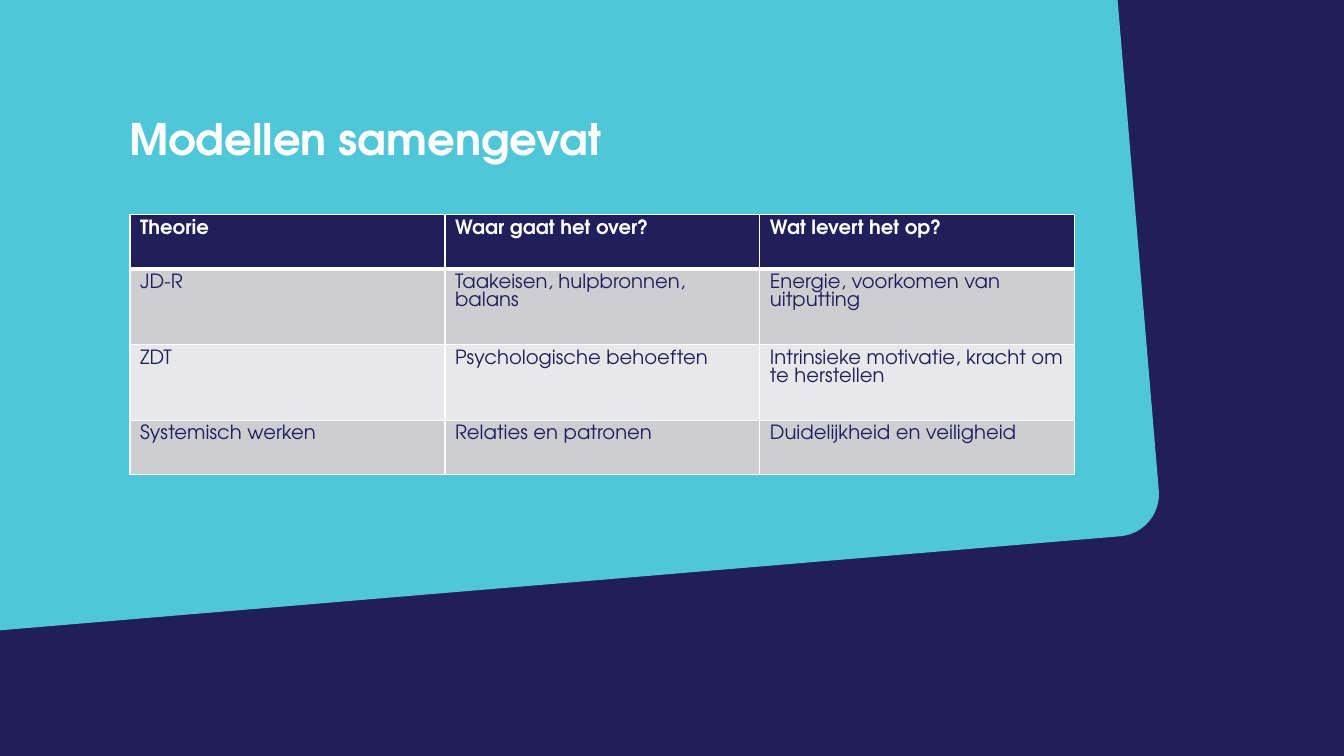
from dataclasses import dataclass

from lxml.etree import SubElement
from pptx import Presentation
from pptx.dml.color import RGBColor
from pptx.enum.shapes import MSO_SHAPE
from pptx.enum.text import MSO_ANCHOR, MSO_AUTO_SIZE, PP_ALIGN
from pptx.oxml.ns import qn
from pptx.util import Inches, Pt


@dataclass(frozen=True)
class Theme:
    font: str = "TeX Gyre Adventor"
    navy: str = "201E5B"
    turquoise: str = "50C6D9"
    white: str = "FFFFFF"
    bands: tuple = ("CDCDD2", "E8E8EA")
    title_size: int = 31
    title_spacing: float = 0.8
    table_size: int = 14
    table_spacing: float = 1.0
    border: int = 1
    header_border: int = 3


THEME = Theme()

ROWS = [
    ("Theorie", "Waar gaat het over?", "Wat levert het op?"),
    ("JD-R", "Taakeisen, hulpbronnen, balans", "Energie, voorkomen van uitputting"),
    ("ZDT", "Psychologische behoeften", "Intrinsieke motivatie, kracht om te herstellen"),
    ("Systemisch werken", "Relaties en patronen", "Duidelijkheid en veiligheid"),
]
ROW_HEIGHTS = (0.54, 0.75, 0.75, 0.54)
TABLE_WIDTH = 9.37


def set_fill(fill, color):
    fill.solid()
    fill.fore_color.rgb = RGBColor.from_string(color)


def style_text(tf, size, spacing, color, bold):
    for p in tf.paragraphs:
        p.alignment = PP_ALIGN.LEFT
        p.line_spacing = spacing
        p.space_before = Pt(0)
        for r in p.runs:
            r.font.name = THEME.font
            r.font.size = Pt(size)
            r.font.bold = bold
            r.font.color.rgb = RGBColor.from_string(color)


def add_panel(s):
    """Tilted rounded panel, placed behind the title."""
    sp = s.shapes.add_shape(MSO_SHAPE.ROUNDED_RECTANGLE, Inches(-0.99), Inches(-0.64),
                            Inches(12.27), Inches(6.45))
    sp.adjustments[0] = 0.065
    sp.rotation = 355.2
    sp.shadow.inherit = False
    set_fill(sp.fill, THEME.turquoise)
    sp.line.fill.background()
    s.shapes.element.insert(2, sp.element)


def set_title(s, text):
    sp = s.shapes.title
    sp.left, sp.top, sp.width, sp.height = map(Inches, (1.28, 1.21, 5.16, 0.75))
    tf = sp.text_frame
    tf.text = text
    tf.word_wrap = True
    tf.auto_size = MSO_AUTO_SIZE.NONE
    tf.vertical_anchor = MSO_ANCHOR.TOP
    tf.margin_left = tf.margin_top = tf.margin_right = tf.margin_bottom = 0
    style_text(tf, THEME.title_size, THEME.title_spacing, THEME.white, True)


def set_borders(cell, **widths):
    """Draw white cell borders; they must precede the fill in the XML."""
    tc_pr = cell._tc.get_or_add_tcPr()
    for side in "LRTB":
        width = widths.get(side, THEME.border)
        ln = SubElement(tc_pr, qn(f"a:ln{side}"), w=str(Pt(width)))
        fill = SubElement(ln, qn("a:solidFill"))
        SubElement(fill, qn("a:srgbClr"), val=THEME.white)


def add_theory_table(s):
    table = s.shapes.add_table(len(ROWS), len(ROWS[0]), Inches(1.29), Inches(2.13),
                               Inches(TABLE_WIDTH), Inches(sum(ROW_HEIGHTS))).table
    for column in table.columns:
        column.width = Inches(TABLE_WIDTH / len(ROWS[0]))
    for i, (texts, height) in enumerate(zip(ROWS, ROW_HEIGHTS)):
        table.rows[i].height = Inches(height)
        header = i == 0
        for j, text in enumerate(texts):
            cell = table.cell(i, j)
            cell.text_frame.text = text
            style_text(cell.text_frame, THEME.table_size, THEME.table_spacing,
                       THEME.white if header else THEME.navy, header)
            set_borders(cell,
                        T=THEME.header_border if i == 1 else THEME.border,
                        B=THEME.header_border if header else THEME.border)
            set_fill(cell.fill, THEME.navy if header else THEME.bands[(i - 1) % 2])


def main():
    prs = Presentation()
    prs.slide_width, prs.slide_height = Inches(13.33), Inches(7.5)
    s = prs.slides.add_slide(prs.slide_layouts[5])
    set_fill(s.background.fill, THEME.navy)
    add_panel(s)
    set_title(s, "Modellen samengevat")
    add_theory_table(s)
    prs.save("out.pptx")


if __name__ == "__main__":
    main()
